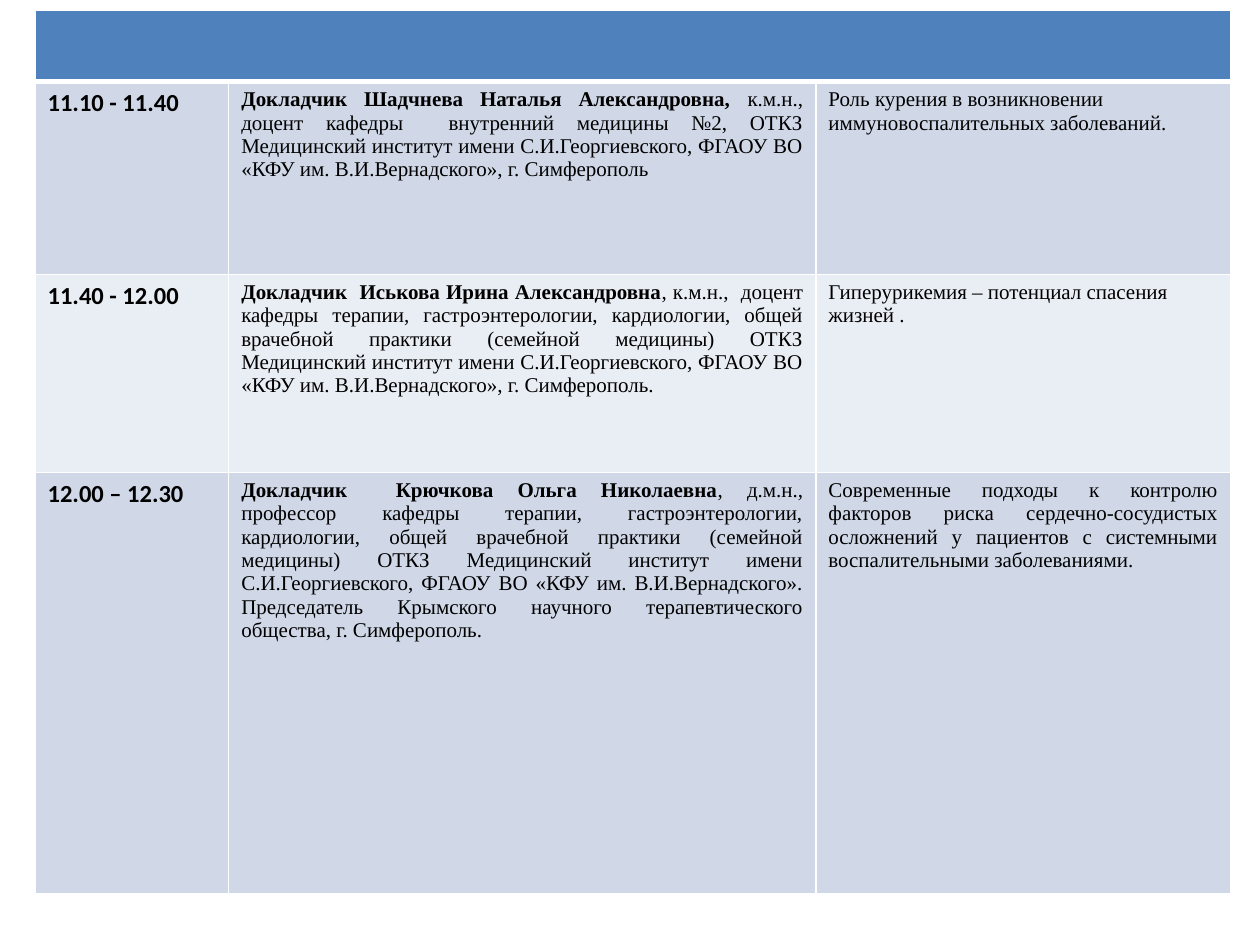
from lxml.etree import SubElement
from pptx import Presentation
from pptx.dml.color import RGBColor
from pptx.enum.text import PP_ALIGN
from pptx.oxml.ns import qn
from pptx.util import Pt

HEADER_FILL = "4F81BD"
BAND_FILLS = ["D0D8E8", "E9EDF4"]
TIME_FORMAT = {"name": "Calibri", "size": Pt(14), "bold": True}
SPEAKER_FORMAT = {"name": "Times New Roman", "size": Pt(12), "bold": True}
BODY_FORMAT = {**SPEAKER_FORMAT, "bold": False}
LEFT, JUSTIFY = PP_ALIGN.LEFT, PP_ALIGN.JUSTIFY


def color(value):
    return RGBColor.from_string(value)


def style_cell(cell, fill, bottom_width=1):
    """Draw white borders, then the fill, which must follow them in the XML."""
    properties = cell._tc.get_or_add_tcPr()
    for side, width in {"L": 1, "R": 1, "T": 1, "B": bottom_width}.items():
        border = SubElement(properties, qn(f"a:ln{side}"), w=str(Pt(width)))
        border_fill = SubElement(border, qn("a:solidFill"))
        SubElement(border_fill, qn("a:srgbClr"), val="FFFFFF")
    cell.fill.solid()
    cell.fill.fore_color.rgb = color(fill)


# Time, speaker, speaker's position, topic, topic alignment
sessions = [
    ("11.10 - 11.40",
     "Докладчик Шадчнева Наталья Александровна, ",
     "к.м.н., доцент кафедры  внутренний медицины №2, ОТКЗ Медицинский "
     "институт имени С.И.Георгиевского, ФГАОУ ВО «КФУ им. "
     "В.И.Вернадского», г. Симферополь",
     "Роль курения в возникновении иммуновоспалительных заболеваний.", LEFT),
    ("11.40 - 12.00",
     "Докладчик  Иськова Ирина Александровна",
     ", к.м.н.,  доцент кафедры терапии, гастроэнтерологии, кардиологии, "
     "общей врачебной практики (семейной медицины) ОТКЗ Медицинский "
     "институт имени С.И.Георгиевского, ФГАОУ ВО «КФУ им. "
     "В.И.Вернадского», г. Симферополь.",
     "Гиперурикемия – потенциал спасения жизней .", LEFT),
    ("12.00 – 12.30",
     "Докладчик  Крючкова Ольга Николаевна",
     ", д.м.н., профессор кафедры терапии, гастроэнтерологии, кардиологии, "
     "общей врачебной практики (семейной медицины) ОТКЗ Медицинский "
     "институт имени С.И.Георгиевского, ФГАОУ ВО «КФУ им. "
     "В.И.Вернадского». Председатель Крымского научного терапевтического "
     "общества, г. Симферополь.",
     "Современные подходы к контролю факторов риска сердечно-сосудистых "
     "осложнений у пациентов с системными воспалительными заболеваниями.",
     JUSTIFY),
]

presentation = Presentation()
presentation.slide_width, presentation.slide_height = Pt(720), Pt(540)
slide = presentation.slides.add_slide(presentation.slide_layouts[6])

# Programme grid
column_widths = [110.7, 335.5, 237]
row_heights = [41, 110.2, 113.2, 240.4]
programme = slide.shapes.add_table(
    len(row_heights), len(column_widths), Pt(20), Pt(5.7),
    Pt(sum(column_widths)), Pt(sum(row_heights))).table
for column, width in zip(programme.columns, column_widths):
    column.width = Pt(width)
for row, height in zip(programme.rows, row_heights):
    row.height = Pt(height)

# Empty header band across all columns
for header in programme.rows[0].cells:
    style_cell(header, HEADER_FILL, bottom_width=3)
programme.cell(0, 0).merge(programme.cell(0, 2))

# One row per session
for index, (time, speaker, position, topic, topic_align) in enumerate(sessions):
    contents = [
        (LEFT, [(time, TIME_FORMAT)]),
        (JUSTIFY, [(speaker, SPEAKER_FORMAT), (position, BODY_FORMAT)]),
        (topic_align, [(topic, BODY_FORMAT)]),
    ]
    for cell, (alignment, pieces) in zip(programme.rows[index + 1].cells, contents):
        style_cell(cell, BAND_FILLS[index % 2])
        paragraph = cell.text_frame.paragraphs[0]
        paragraph.alignment = alignment
        for text, text_format in pieces:
            run = paragraph.add_run()
            run.text = text
            run.font.color.rgb = color("000000")
            for attribute, value in text_format.items():
                setattr(run.font, attribute, value)

presentation.save("out.pptx")
